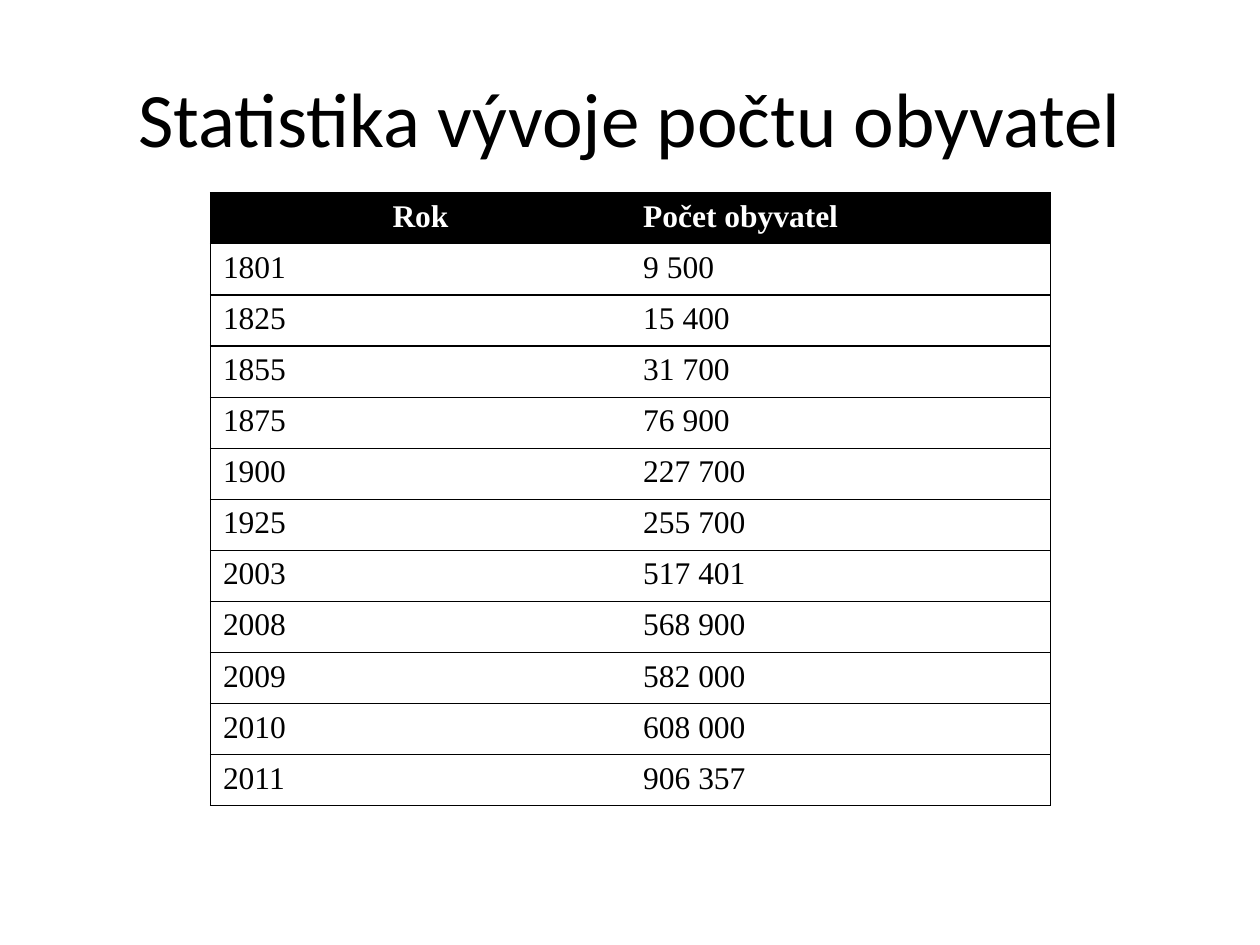
from lxml.etree import SubElement
from pptx import Presentation
from pptx.dml.color import RGBColor
from pptx.enum.text import MSO_ANCHOR, PP_ALIGN
from pptx.oxml.ns import qn
from pptx.util import Inches, Pt

BLACK = RGBColor(0, 0, 0)
WHITE = RGBColor(255, 255, 255)
BORDER_WIDTH = Pt(0.75)

HEADER = ("Rok", "Počet obyvatel")
POPULATION = [
    ("1801", "9 500"),
    ("1825", "15 400"),
    ("1855", "31 700"),
    ("1875", "76 900"),
    ("1900", "227 700"),
    ("1925", "255 700"),
    ("2003", "517 401"),
    ("2008", "568 900"),
    ("2009", "582 000"),
    ("2010", "608 000"),
    ("2011", "906 357"),
]


def write_text(text_frame, text, *, font, size, color=BLACK, bold=False,
               align=PP_ALIGN.LEFT, anchor=MSO_ANCHOR.TOP):
    text_frame.word_wrap = True
    text_frame.vertical_anchor = anchor
    paragraph = text_frame.paragraphs[0]
    paragraph.alignment = align
    run = paragraph.add_run()
    run.text = text
    run.font.name = font
    run.font.size = Pt(size)
    run.font.bold = bold
    run.font.color.rgb = color


def set_borders(cell, visible_sides):
    properties = cell._tc.get_or_add_tcPr()
    for side in "LRTB":
        line = SubElement(properties, qn(f"a:ln{side}"), w=str(BORDER_WIDTH))
        if side in visible_sides:
            fill = SubElement(line, qn("a:solidFill"))
            SubElement(fill, qn("a:srgbClr"), val=str(BLACK))
        else:
            SubElement(line, qn("a:noFill"))


def add_title(slide, left, top, width, height):
    title = slide.shapes.title
    title.left, title.top, title.width, title.height = left, top, width, height
    write_text(title.text_frame, "Statistika vývoje počtu obyvatel",
               font="Calibri", size=44, align=PP_ALIGN.CENTER,
               anchor=MSO_ANCHOR.MIDDLE)


def add_population_table(slide, left, top, width, height):
    rows = [HEADER] + POPULATION
    table = slide.shapes.add_table(
        len(rows), len(HEADER), left, top, width, height).table
    table.horz_banding = False
    for row_index, values in enumerate(rows):
        is_header = row_index == 0
        for column_index, value in enumerate(values):
            cell = table.cell(row_index, column_index)
            set_borders(cell, "LTB" if column_index == 0 else "RTB")
            cell.fill.solid()
            cell.fill.fore_color.rgb = BLACK if is_header else WHITE
            centered = is_header and column_index == 0
            write_text(cell.text_frame, value, font="Times New Roman", size=18,
                       color=WHITE if is_header else BLACK, bold=is_header,
                       align=PP_ALIGN.CENTER if centered else PP_ALIGN.LEFT)


def main():
    presentation = Presentation()
    presentation.slide_width = Inches(10)
    presentation.slide_height = Inches(7.5)
    slide = presentation.slides.add_slide(presentation.slide_layouts[5])
    add_title(slide, Inches(0.5), Inches(0.3), Inches(9), Inches(1.25))
    add_population_table(slide, Inches(1.67), Inches(1.53),
                         Inches(6.67), Inches(4.87))
    presentation.save("out.pptx")


if __name__ == "__main__":
    main()
